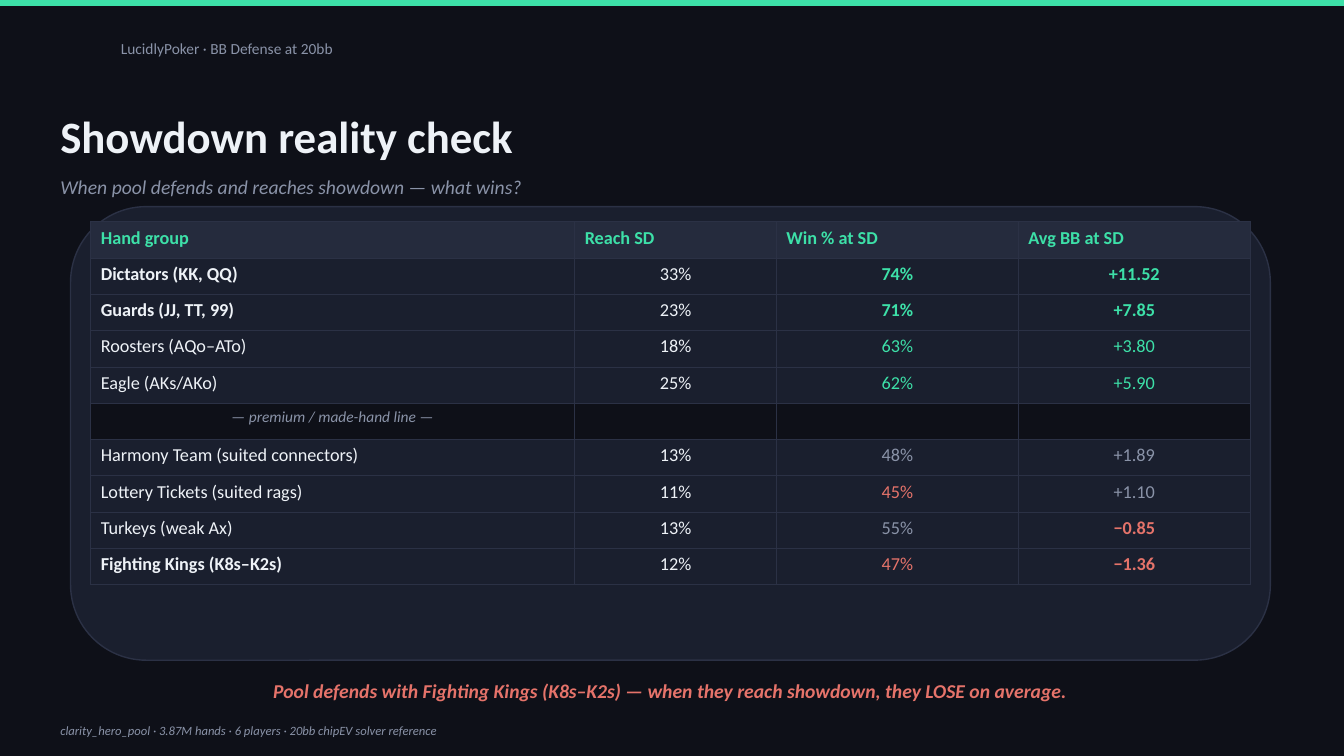
import pptx
import pptx.util
import pptx.dml.color
import pptx.enum.shapes
import pptx.enum.text
import pptx.oxml
import pptx.oxml.ns

RGBColor = pptx.dml.color.RGBColor
Align = pptx.enum.text.PP_ALIGN
Anchor = pptx.enum.text.MSO_ANCHOR
Preset = pptx.enum.shapes.MSO_SHAPE

PX = 9144  # EMU per px, at 100 px to the inch
NIGHT = RGBColor(0x0E, 0x10, 0x18)
PANEL = RGBColor(0x1A, 0x1F, 0x2E)
HEADER = RGBColor(0x25, 0x2B, 0x3D)
EDGE = RGBColor(0x2B, 0x31, 0x45)
MINT = RGBColor(0x3D, 0xE0, 0xA8)
WHITE = RGBColor(0xEE, 0xF2, 0xF7)
GREY = RGBColor(0x8A, 0x93, 0xA8)
CORAL = RGBColor(0xE5, 0x73, 0x6A)


def write(frame, text, color, align=Align.LEFT, **formats):
    para = frame.paragraphs[0]
    para.alignment = align
    span = para.add_run()
    span.text = text
    span.font.color.rgb = color
    for name, value in {"name": "Calibri", "bold": False, "italic": False, **formats}.items():
        setattr(span.font, name, value)


def add_borders(cell):
    for side in ("lnL", "lnR", "lnT", "lnB"):
        cell._tc.get_or_add_tcPr().append(pptx.oxml.parse_xml(
            f'<a:{side} {pptx.oxml.ns.nsdecls("a")} w="6350"><a:solidFill>'
            f'<a:srgbClr val="{EDGE}"/></a:solidFill></a:{side}>'))


deck = pptx.Presentation()
deck.slide_width, deck.slide_height = 1333 * PX, 750 * PX
page = deck.slides.add_slide(deck.slide_layouts[6])
page.background.fill.solid()
page.background.fill.fore_color.rgb = NIGHT

# Top bar and table panel
for preset, bounds, fill, edge in (
    (Preset.RECTANGLE, (0, 0, 1333, 6), MINT, None),
    (Preset.ROUNDED_RECTANGLE, (70, 205, 1190, 450), PANEL, EDGE),
):
    shape = page.shapes.add_shape(preset, *(n * PX for n in bounds))
    shape.shadow.inherit = False
    shape.fill.solid()
    shape.fill.fore_color.rgb = fill
    if edge is None:
        shape.line.fill.background()
    else:
        shape.line.color.rgb = edge
        shape.line.width = pptx.util.Pt(1)

# Text lines
for bounds, text, size, color, formats in (
    ((110, 25, 800, 45), "LucidlyPoker · BB Defense at 20bb", 11, GREY, {}),
    ((50, 705, 1230, 40),
     "clarity_hero_pool · 3.87M hands · 6 players · 20bb chipEV solver reference",
     9, GREY, {"italic": True}),
    ((50, 100, 1230, 70), "Showdown reality check", 32, WHITE, {"bold": True}),
    ((50, 165, 1230, 40), "When pool defends and reaches showdown — what wins?",
     14, GREY, {"italic": True}),
    ((50, 665, 1230, 40),
     "Pool defends with Fighting Kings (K8s–K2s) — when they reach showdown, they LOSE on average.",
     14, CORAL, {"bold": True, "italic": True, "align": Align.CENTER}),
):
    box = page.shapes.add_textbox(*(n * PX for n in bounds))
    box.text_frame.word_wrap = True
    box.text_frame.vertical_anchor = Anchor.MIDDLE
    write(box.text_frame, text, color, size=pptx.util.Pt(size), **formats)

# Table: each row has its texts, win colour, average colour and bold columns
DIVIDER = "— premium / made-hand line —"
hands = (
    (("Hand group", "Reach SD", "Win % at SD", "Avg BB at SD"), MINT, MINT, (0, 1, 2, 3)),
    (("Dictators (KK, QQ)", "33%", "74%", "+11.52"), MINT, MINT, (0, 2, 3)),
    (("Guards (JJ, TT, 99)", "23%", "71%", "+7.85"), MINT, MINT, (0, 2, 3)),
    (("Roosters (AQo–ATo)", "18%", "63%", "+3.80"), MINT, MINT, ()),
    (("Eagle (AKs/AKo)", "25%", "62%", "+5.90"), MINT, MINT, ()),
    ((DIVIDER, "", "", ""), GREY, GREY, ()),
    (("Harmony Team (suited connectors)", "13%", "48%", "+1.89"), GREY, GREY, ()),
    (("Lottery Tickets (suited rags)", "11%", "45%", "+1.10"), CORAL, GREY, ()),
    (("Turkeys (weak Ax)", "13%", "55%", "−0.85"), GREY, CORAL, (3,)),
    (("Fighting Kings (K8s–K2s)", "12%", "47%", "−1.36"), CORAL, CORAL, (0, 3)),
)
table = page.shapes.add_table(
    len(hands), 4, 90 * PX, 220 * PX, 1150 * PX, 36 * len(hands) * PX).table
table.first_row = table.horz_banding = False
for column, width in zip(table.columns, (480, 200, 240, 230)):
    column.width = width * PX

for row, (texts, win_color, average_color, bold_columns) in enumerate(hands):
    table.rows[row].height = 36 * PX
    is_header, is_divider = row == 0, texts[0] == DIVIDER
    base = MINT if is_header else GREY if is_divider else WHITE
    fill = HEADER if is_header else NIGHT if is_divider else PANEL
    colors = (base, base, win_color, average_color)
    for column, (text, color) in enumerate(zip(texts, colors)):
        cell = table.cell(row, column)
        add_borders(cell)
        cell.fill.solid()
        cell.fill.fore_color.rgb = fill
        if not text:
            cell.margin_top = cell.margin_bottom = 0  # keeps the row at its set height
            continue
        centred = is_divider or (column > 0 and not is_header)
        write(cell.text_frame, text, color, Align.CENTER if centred else Align.LEFT,
              size=pptx.util.Pt(11 if is_divider else 13),
              bold=column in bold_columns, italic=is_divider)

deck.save("out.pptx")
